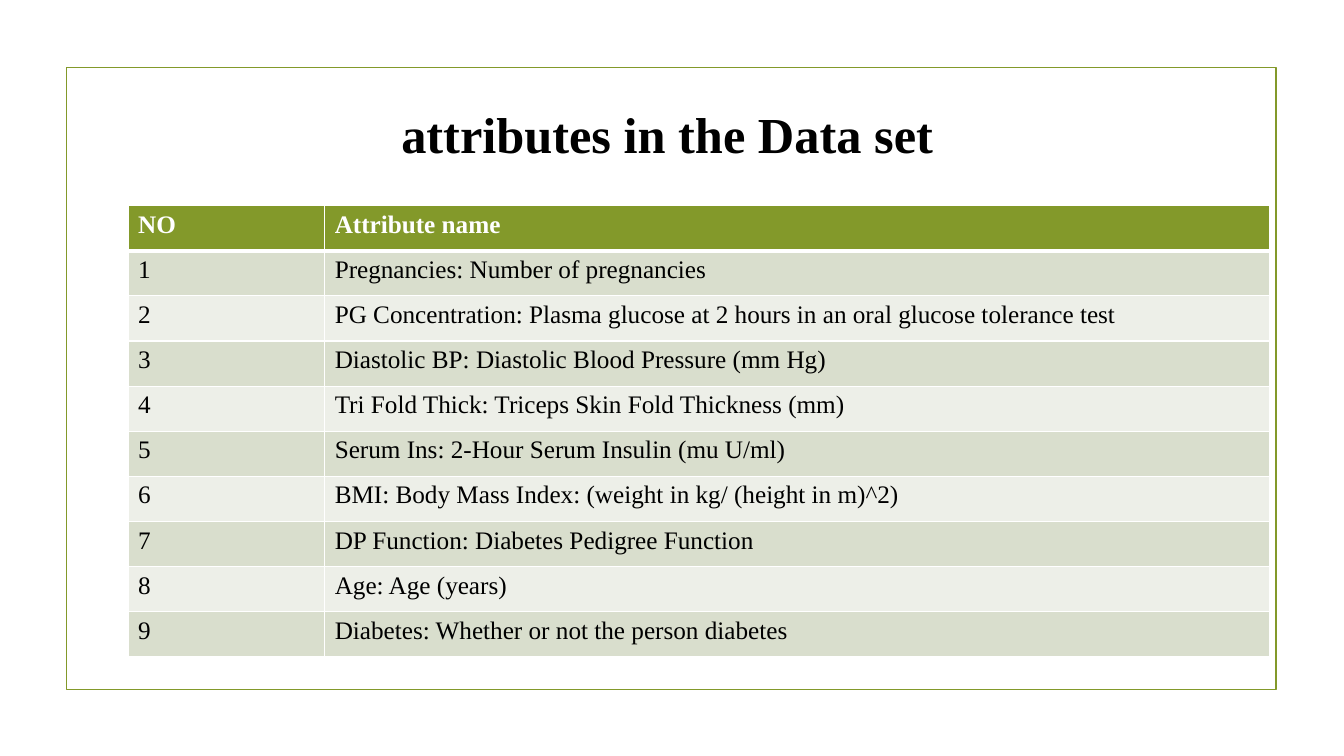
from lxml.etree import SubElement
from pptx import Presentation
from pptx.dml.color import RGBColor
from pptx.enum.shapes import MSO_SHAPE as SHAPE
from pptx.enum.text import MSO_ANCHOR as ANCHOR, PP_ALIGN as ALIGN
from pptx.oxml.ns import qn
from pptx.util import Pt

PX = 9144  # EMU per px, 100 px to the inch
COLORS = {"green": "83992A", "band": "D9DECD", "pale": "EDEFE8",
          "black": "000000", "white": "FFFFFF"}
FONT = "Times New Roman"
ATTRIBUTES = [
    "Pregnancies: Number of pregnancies",
    "PG Concentration: Plasma glucose at 2 hours in an oral glucose tolerance test",
    "Diastolic BP: Diastolic Blood Pressure (mm Hg)",
    "Tri Fold Thick: Triceps Skin Fold Thickness (mm)",
    "Serum Ins: 2-Hour Serum Insulin (mu U/ml)",
    "BMI: Body Mass Index: (weight in kg/ (height in m)^2)",
    "DP Function: Diabetes Pedigree Function",
    "Age: Age (years)",
    "Diabetes: Whether or not the person diabetes",
]


def rgb(name):
    return RGBColor.from_string(COLORS[name])


def px(*lengths):
    return [n * PX for n in lengths]


def write(tf, text, size=18, color="black", bold=False):
    p = tf.paragraphs[0]
    p.alignment = ALIGN.LEFT
    r = p.add_run()
    r.text = text
    r.font.name, r.font.size, r.font.bold = FONT, Pt(size), bold
    r.font.color.rgb = rgb(color)


def set_borders(cell, **widths):
    tc_pr = cell._tc.get_or_add_tcPr()
    for side in "LRTB":
        ln = SubElement(tc_pr, qn(f"a:ln{side}"), w=str(Pt(widths.get(side, 1))))
        fill = SubElement(ln, qn("a:solidFill"))
        SubElement(fill, qn("a:srgbClr"), val=COLORS["white"])


class SlideBuilder:
    def __init__(self, prs):
        self.s = prs.slides.add_slide(prs.slide_layouts[5])
        self.s.background.fill.solid()
        self.s.background.fill.fore_color.rgb = rgb("white")

    def frame(self, *box):
        sp = self.s.shapes.add_shape(SHAPE.RECTANGLE, *px(*box))
        sp.shadow.inherit = False
        sp.fill.background()
        sp.line.color.rgb = rgb("green")
        sp.line.width = Pt(1.25)
        self.s.shapes.title._element.addprevious(sp._element)

    def title(self, text, *box):
        sp = self.s.shapes.title
        sp.left, sp.top, sp.width, sp.height = px(*box)
        sp.text_frame.word_wrap = True
        sp.text_frame.vertical_anchor = ANCHOR.MIDDLE
        write(sp.text_frame, text, size=36, bold=True)

    def table(self, rows, col_widths, *box):
        table = self.s.shapes.add_table(len(rows), len(col_widths), *px(*box)).table
        for col, width in zip(table.columns, px(*col_widths)):
            col.width = width
        for i, row in enumerate(rows):
            header = i == 0
            fill = "green" if header else ("pale", "band")[i % 2]
            for j, text in enumerate(row):
                cell = table.cell(i, j)
                set_borders(cell, T=3 if i == 1 else 1, B=3 if header else 1)
                cell.fill.solid()
                cell.fill.fore_color.rgb = rgb(fill)
                write(cell.text_frame, text, bold=header,
                      color="white" if header else "black")


def main():
    prs = Presentation()
    prs.slide_width, prs.slide_height = px(1333, 750)
    slide = SlideBuilder(prs)
    slide.frame(66, 67, 1200, 617)
    slide.title("attributes in the Data set", 388, 97, 668, 71)
    rows = [("NO", "Attribute name")]
    rows += [(str(n), name) for n, name in enumerate(ATTRIBUTES, 1)]
    slide.table(rows, (195, 937), 127, 204, 1132, 448)
    prs.save("out.pptx")


if __name__ == "__main__":
    main()
